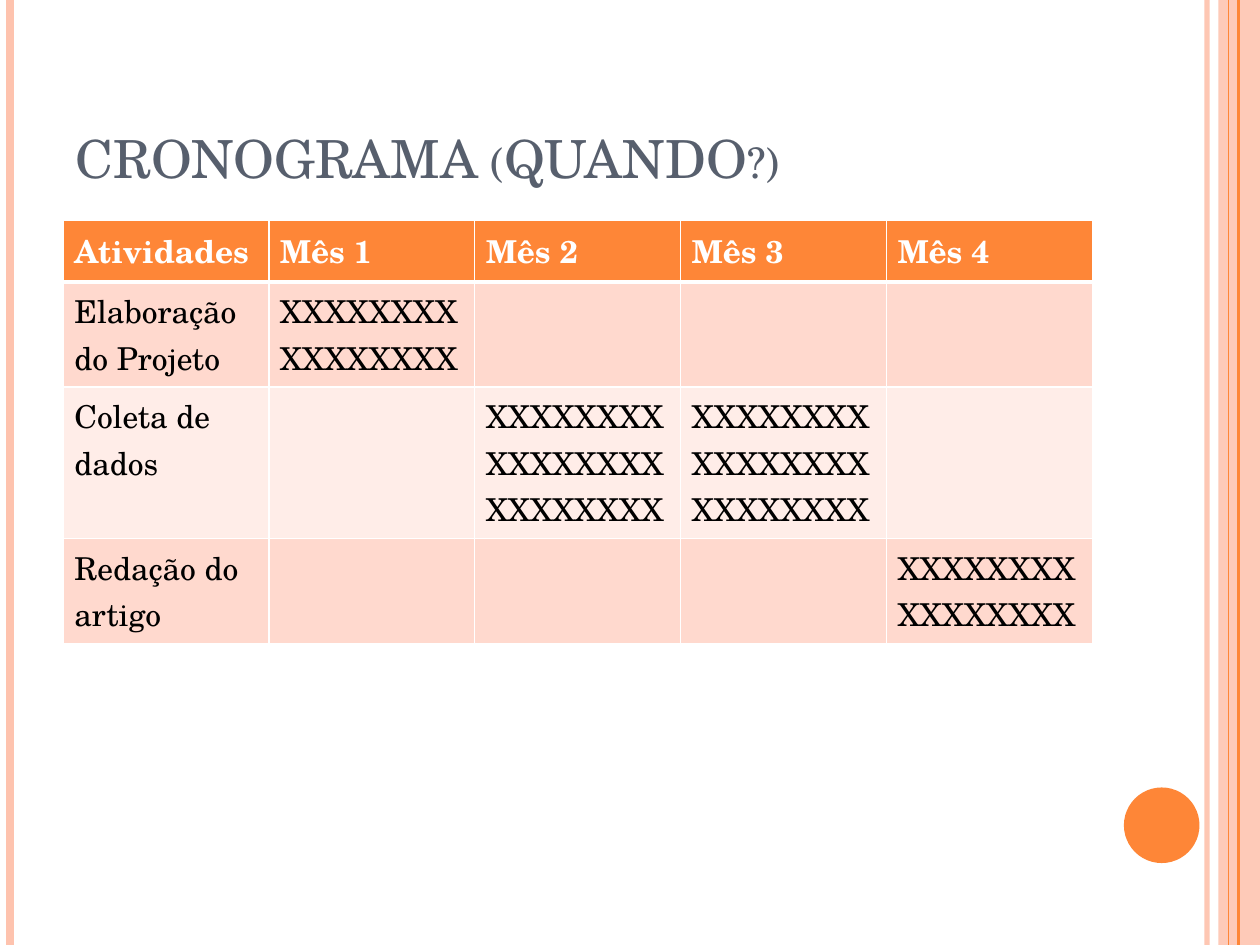
"""Build a project schedule slide with a table of activities by month."""
from lxml import etree
from pptx import Presentation
from pptx.dml.color import RGBColor
from pptx.enum import shapes, text
from pptx.oxml import ns
from pptx.util import Inches, Pt

FONT = "TeX Gyre Schola"
ORANGE = RGBColor(0xFE, 0x86, 0x37)
PEACH = RGBColor(0xFE, 0xC3, 0xAE)
BAND_DARK = RGBColor(0xFF, 0xD9, 0xCE)
BAND_LIGHT = RGBColor(0xFF, 0xED, 0xE8)
SLATE = RGBColor(0x57, 0x5F, 0x6D)
WHITE = RGBColor(0xFF, 0xFF, 0xFF)
BLACK = RGBColor(0, 0, 0)


def write(tf, words, size=18, color=BLACK, bold=False):
    p = tf.paragraphs[0]
    p.alignment = text.PP_ALIGN.LEFT
    r = p.add_run()
    r.text = words
    r.font.name = FONT
    r.font.size = Pt(size)
    r.font.bold = bold
    r.font.color.rgb = color
    return r


def set_alpha(fill, percent):
    color = fill._xPr.find(".//" + ns.qn("a:srgbClr"))
    etree.SubElement(color, ns.qn("a:alpha"), val=str(percent * 1000))


prs = Presentation()
prs.slide_width, prs.slide_height = Inches(10), Inches(7.5)
s = prs.slides.add_slide(prs.slide_layouts[5])

bar = s.shapes.add_shape(shapes.MSO_SHAPE.RECTANGLE,
                         Inches(9.67), 0, Inches(0.33), Inches(7.5))
circle = s.shapes.add_shape(shapes.MSO_SHAPE.OVAL,
                            Inches(8.92), Inches(6.25), Inches(0.6), Inches(0.6))
for sp, color in ((bar, PEACH), (circle, ORANGE)):
    sp.shadow.inherit = False
    sp.fill.solid()
    sp.fill.fore_color.rgb = color
    sp.line.fill.background()
set_alpha(bar.fill, 87)

for x, color, width, alpha in ((9.58, PEACH, 3, 93), (0.08, PEACH, 4.5, 100),
                               (9.83, ORANGE, 1.5, 100), (9.75, ORANGE, 0.75, 100)):
    stripe = s.shapes.add_connector(shapes.MSO_CONNECTOR.STRAIGHT,
                                    Inches(x), 0, Inches(x), Inches(7.5))
    stripe.line.color.rgb = color
    stripe.line.width = Pt(width)
    if alpha < 100:
        set_alpha(stripe.line.fill, alpha)
    etree.SubElement(stripe._element.spPr, ns.qn("a:effectLst"))

title = s.shapes.title
title.left, title.top = Inches(0.5), Inches(0.3)
title.width, title.height = Inches(8.17), Inches(1.25)
title.text_frame.vertical_anchor = text.MSO_ANCHOR.BOTTOM
r = write(title.text_frame, "CRONOGRAMA (QUANDO?)", size=30, color=SLATE)
r.font._element.set("cap", "small")

rows = [
    ["Atividades"] + [f"Mês {n}" for n in range(1, 5)],
    ["Elaboração do Projeto", "X" * 16, "", "", ""],
    ["Coleta de dados", "", "X" * 24, "X" * 24, ""],
    ["Redação do artigo", "", "", "", "X" * 16],
]
fills = [ORANGE, BAND_DARK, BAND_LIGHT, BAND_DARK]
heights = [0.48, 0.83, 1.2, 0.83]
table = s.shapes.add_table(4, 5, Inches(0.5), Inches(1.75),
                           Inches(8.17), Inches(sum(heights))).table
for i, words in enumerate(rows):
    table.rows[i].height = Inches(heights[i])
    header = i == 0
    for j, word in enumerate(words):
        cell = table.cell(i, j)
        cell.margin_left = cell.margin_right = Inches(0.09)
        cell.margin_top = cell.margin_bottom = Inches(0.05)
        if word:
            write(cell.text_frame, word, color=WHITE if header else BLACK, bold=header)
        tcPr = cell._tc.get_or_add_tcPr()
        for side in "LRTB":
            thick = (side == "B" and header) or (side == "T" and i == 1)
            ln = etree.SubElement(tcPr, ns.qn(f"a:ln{side}"), w=str(Pt(3 if thick else 1)))
            solid = etree.SubElement(ln, ns.qn("a:solidFill"))
            etree.SubElement(solid, ns.qn("a:srgbClr"), val=str(WHITE))
        cell.fill.solid()
        cell.fill.fore_color.rgb = fills[i]

prs.save("out.pptx")
